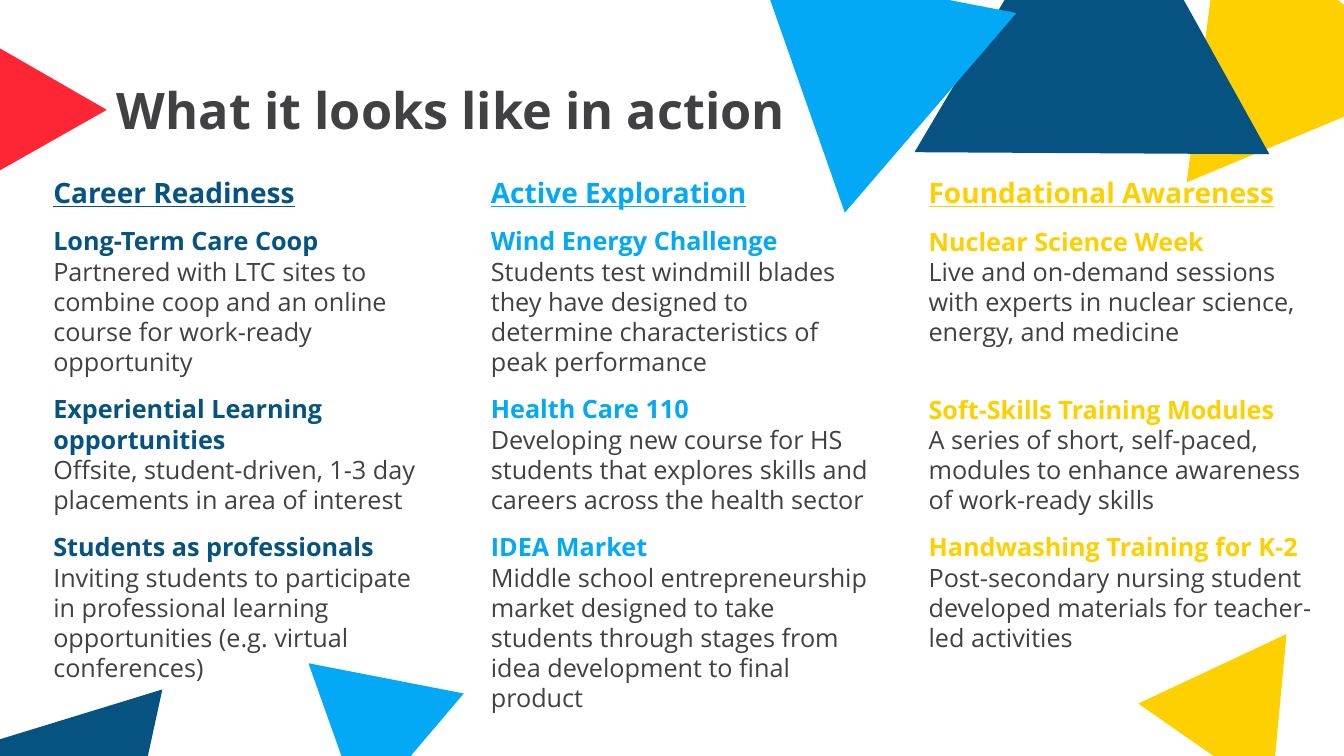
"""Build a slide listing career programs in three themed columns."""
from dataclasses import dataclass

from lxml import etree
from pptx import Presentation
from pptx.dml.color import RGBColor
from pptx.enum.text import MSO_ANCHOR, MSO_AUTO_SIZE, PP_ALIGN
from pptx.oxml.ns import qn
from pptx.util import Inches, Pt

LEFT = PP_ALIGN.LEFT
TOP, MIDDLE = MSO_ANCHOR.TOP, MSO_ANCHOR.MIDDLE
NO_AUTOFIT = MSO_AUTO_SIZE.NONE


@dataclass(frozen=True)
class Theme:
    """Colours, font and type sizes of the slide."""
    font: str = "Open Sans"
    text: str = "414042"
    yellow: str = "FFD000"
    red: str = "FE2635"
    navy: str = "065381"
    blue: str = "03A9F4"
    title_size: int = 36
    heading_size: int = 20
    body_size: int = 18
    spacing: float = 6
    wide_spacing: float = 27.6


THEME = Theme()
COLUMN_LEFT, COLUMN_STEP = 0.43, 4.34
COLUMN_TOP, COLUMN_WIDTH, COLUMN_HEIGHT = 1.69, 4.02, 5.75

TRIANGLES = [
    (THEME.yellow, [(12.12, -0.89), (14.26, 0.77), (11.77, 1.81)]),
    (THEME.red, [(0, 0.48), (1.06, 1.09), (0, 1.69)]),
    (THEME.navy, [(10.88, -1.55), (12.59, 1.53), (9.07, 1.51)]),
    (THEME.blue, [(7.51, -0.37), (10.08, 0.13), (8.38, 2.11)]),
    (THEME.yellow, [(12.76, 6.29), (12.61, 7.9), (11.29, 6.98)]),
    (THEME.navy, [(-0.28, 7.42), (1.61, 6.84), (1.19, 8.77)]),
    (THEME.blue, [(3.06, 6.58), (4.6, 6.88), (3.59, 8.07)]),
]

CAREER_READINESS = [
    ("Long-Term Care Coop",
     "Partnered with LTC sites to combine coop and an online course for work-ready opportunity"),
    ("Experiential Learning opportunities",
     "Offsite, student-driven, 1-3 day placements in area of interest"),
    ("Students as professionals",
     "Inviting students to participate in professional learning opportunities "
     "(e.g. virtual conferences)"),
]
ACTIVE_EXPLORATION = [
    ("Wind Energy Challenge",
     "Students test windmill blades they have designed to determine characteristics "
     "of peak performance"),
    ("Health Care 110",
     "Developing new course for HS students that explores skills and careers "
     "across the health sector"),
    ("IDEA Market",
     "Middle school entrepreneurship market designed to take students through stages "
     "from idea development to final product"),
]
FOUNDATIONAL_AWARENESS = [
    ("Nuclear Science Week",
     "Live and on-demand sessions with experts in nuclear science, energy, and medicine"),
    ("Soft-Skills Training Modules",
     "A series of short, self-paced, modules to enhance awareness of work-ready skills"),
    ("Handwashing Training for K-2",
     "Post-secondary nursing student developed materials for teacher-led activities"),
]


def place(shape, left, top, width, height):
    """Move and size a shape, in inches."""
    shape.left, shape.top = Inches(left), Inches(top)
    shape.width, shape.height = Inches(width), Inches(height)


def add_run(paragraph, text, size, color, bold=False, underline=False):
    """Append a formatted run to a paragraph."""
    run = paragraph.add_run()
    run.text = text
    font = run.font
    font.name, font.size = THEME.font, Pt(size)
    font.bold, font.underline = bold, underline
    font.color.rgb = RGBColor.from_string(color)


def add_triangle(slide, color, corners):
    """Draw a filled triangle through three corners in inches."""
    start, *others = [(Inches(x), Inches(y)) for x, y in corners]
    builder = slide.shapes.build_freeform(*start, scale=1.0)
    builder.add_line_segments(others, close=True)
    shape = builder.convert_to_shape()
    shape.fill.solid()
    shape.fill.fore_color.rgb = RGBColor.from_string(color)
    shape.line.fill.background()
    shape.shadow.inherit = False


def fill_title(shape, text):
    """Place and write the slide title."""
    place(shape, 1.06, 0.4, 11.36, 1.45)
    frame = shape.text_frame
    frame.auto_size = NO_AUTOFIT
    frame.vertical_anchor = MIDDLE
    paragraph = frame.paragraphs[0]
    paragraph.alignment = LEFT
    paragraph.line_spacing = 0.9
    add_run(paragraph, text, THEME.title_size, THEME.text, bold=True)


def format_paragraph(paragraph, space_before=THEME.spacing):
    """Set spacing and remove the bullet and its indent."""
    paragraph.alignment = LEFT
    paragraph.line_spacing = 1.0
    paragraph.space_before = Pt(space_before)
    paragraph.space_after = Pt(THEME.spacing)
    properties = paragraph._p.get_or_add_pPr()
    properties.set("marL", "0")
    properties.set("indent", "0")
    etree.SubElement(properties, qn("a:buNone"))


def fill_column(shape, index, color, heading, programs, wide_before=None):
    """Write a heading and its programs, with extra room before one of them."""
    place(shape, COLUMN_LEFT + index * COLUMN_STEP, COLUMN_TOP, COLUMN_WIDTH, COLUMN_HEIGHT)
    frame = shape.text_frame
    frame.word_wrap = True
    frame.auto_size = NO_AUTOFIT
    frame.vertical_anchor = TOP
    paragraph = frame.paragraphs[0]
    format_paragraph(paragraph)
    add_run(paragraph, heading, THEME.heading_size, color, bold=True, underline=True)
    for name, description in programs:
        paragraph = frame.add_paragraph()
        format_paragraph(paragraph, THEME.wide_spacing if name == wide_before else THEME.spacing)
        add_run(paragraph, name, THEME.body_size, color, bold=True)
        paragraph.add_line_break()
        add_run(paragraph, description, THEME.body_size, THEME.text)


def main():
    """Build and save the presentation."""
    presentation = Presentation()
    presentation.slide_width, presentation.slide_height = Inches(13.33), Inches(7.5)
    slide = presentation.slides.add_slide(presentation.slide_layouts[1])
    for color, corners in TRIANGLES:
        add_triangle(slide, color, corners)
    fill_title(slide.shapes.title, "What it looks like in action")
    fill_column(slide.shapes.add_textbox(0, 0, 0, 0), 0, THEME.navy,
                "Career Readiness", CAREER_READINESS)
    fill_column(slide.shapes.add_textbox(0, 0, 0, 0), 1, THEME.blue,
                "Active Exploration", ACTIVE_EXPLORATION)
    fill_column(slide.placeholders[1], 2, THEME.yellow, "Foundational Awareness",
                FOUNDATIONAL_AWARENESS, wide_before="Soft-Skills Training Modules")
    presentation.save("out.pptx")


if __name__ == "__main__":
    main()
